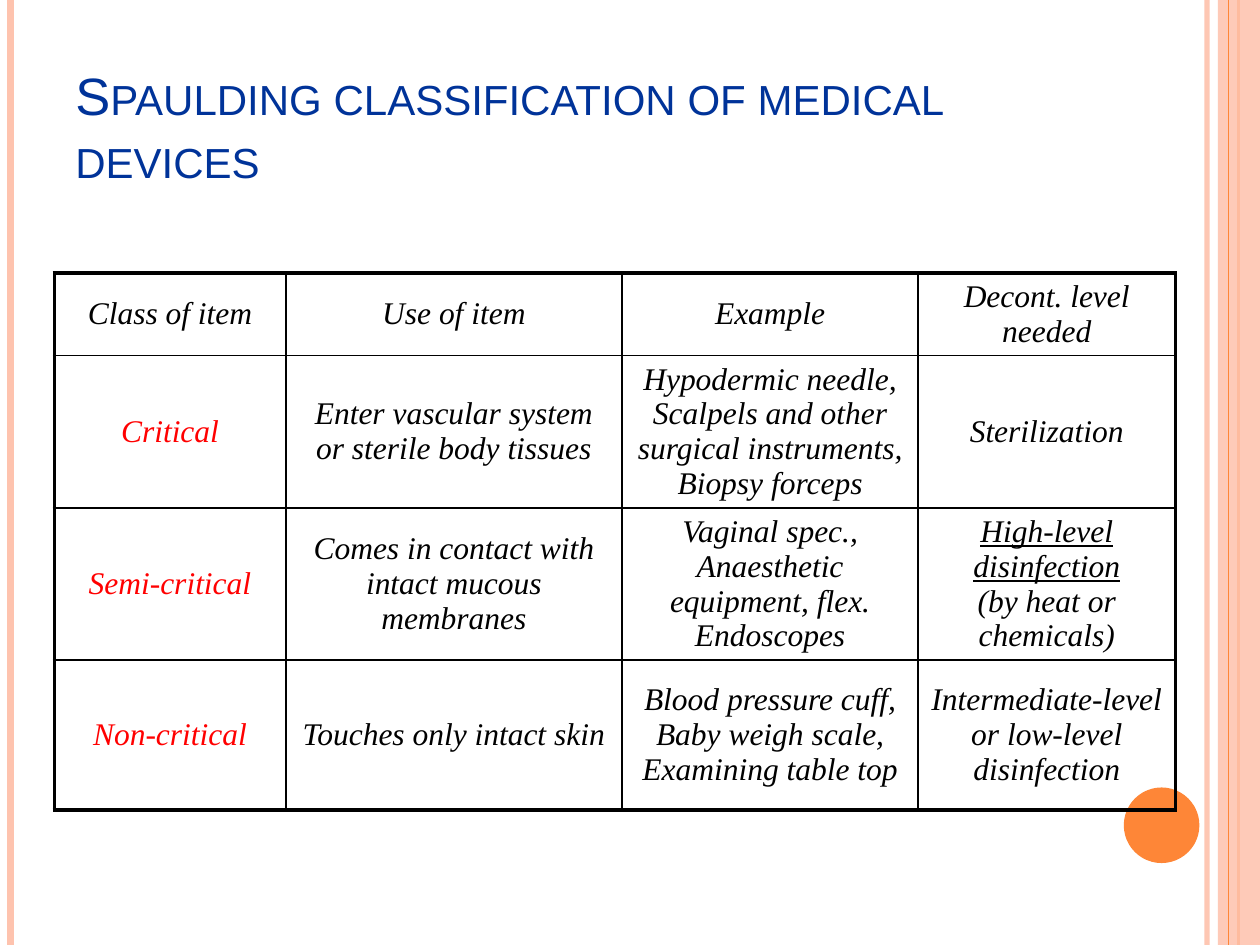
from lxml.etree import SubElement
from pptx import Presentation
from pptx.dml.color import RGBColor
from pptx.enum.shapes import MSO_CONNECTOR, MSO_SHAPE
from pptx.enum.text import MSO_ANCHOR, PP_ALIGN
from pptx.oxml.ns import qn
from pptx.util import Pt

WIDTH, HEIGHT = 720, 540
PEACH, ORANGE, BLACK, RED, WHITE, BLUE = "FEC3AE", "FE8637", "000000", "FF0000", "FFFFFF", "003399"

TITLE = "Spaulding classification of medical devices"
ROWS = [
    ["Class of item", "Use of item", "Example", "Decont. level needed"],
    ["Critical", "Enter vascular system or sterile body tissues",
     "Hypodermic needle, Scalpels and other surgical instruments, Biopsy forceps", "Sterilization"],
    ["Semi-critical", "Comes in contact with intact mucous membranes",
     "Vaginal spec., Anaesthetic equipment, flex. Endoscopes",
     ("High-level disinfection", "(by heat or chemicals)")],
    ["Non-critical", "Touches only intact skin",
     "Blood pressure cuff, Baby weigh scale, Examining table top",
     "Intermediate-level or low-level disinfection"],
]
COLUMN_WIDTHS = [132.3, 192.2, 169.2, 147]
ROW_HEIGHTS = [47.2, 87, 87, 85.7]
TABLE_LEFT, TABLE_TOP = 31, 156
BACK_LINES = [(689.8, PEACH, 3, 93), (6, PEACH, 4.5, 100), (707.8, ORANGE, 1.5, 100)]
BAND = (MSO_SHAPE.RECTANGLE, (696, 0, 24, HEIGHT), PEACH, 87)
FRONT_LINE = (702, ORANGE, 0.75, 100)
DISC = (MSO_SHAPE.OVAL, (642.2, 450, 43.2, 43.2), ORANGE, 100)


def color(value):
    return RGBColor.from_string(value)


def set_values(target, values):
    for name, value in values.items():
        setattr(target, name, value)


def set_alpha(element, percent):
    if percent < 100:
        fill_color = next(element.iter(qn("a:srgbClr")))
        SubElement(fill_color, qn("a:alpha"), val=str(percent * 1000))


def add_stripe(slide, x, line_color, width, alpha):
    connector = slide.shapes.add_connector(MSO_CONNECTOR.STRAIGHT, Pt(x), 0, Pt(x), Pt(HEIGHT))
    connector.line.color.rgb = color(line_color)
    connector.line.width = Pt(width)
    properties = connector._element.spPr
    set_alpha(properties, alpha)
    SubElement(properties, qn("a:effectLst"))


def add_filled_shape(slide, kind, box, fill_color, alpha):
    shape = slide.shapes.add_shape(kind, *map(Pt, box))
    shape.shadow.inherit = False
    shape.fill.solid()
    shape.fill.fore_color.rgb = color(fill_color)
    shape.line.fill.background()
    set_alpha(shape._element.spPr, alpha)


def add_run(paragraph, text, font_color, values):
    run = paragraph.add_run()
    run.text = text
    set_values(run.font, values)
    run.font.color.rgb = color(font_color)
    return run


def add_title(slide):
    box = slide.shapes.add_textbox(*map(Pt, (36, 21.6, 588, 90)))
    set_values(box.text_frame, {"word_wrap": True, "vertical_anchor": MSO_ANCHOR.BOTTOM})
    paragraph = box.text_frame.paragraphs[0]
    paragraph.alignment = PP_ALIGN.LEFT
    run = add_run(paragraph, TITLE, BLUE, {"name": "Arial", "size": Pt(30)})
    run.font._element.set("cap", "small")


def set_borders(cell, widths):
    properties = cell._tc.get_or_add_tcPr()
    for side, width in widths.items():
        line = SubElement(properties, qn(f"a:ln{side}"), w=str(Pt(width)))
        fill = SubElement(line, qn("a:solidFill"))
        SubElement(fill, qn("a:srgbClr"), val=BLACK)


def fill_cell(cell, content, row, column):
    last_row, last_column = len(ROWS) - 1, len(COLUMN_WIDTHS) - 1
    outer = {"L": column == 0, "R": column == last_column, "T": row == 0, "B": row == last_row}
    set_borders(cell, {side: 2.25 if edge else 1 for side, edge in outer.items()})
    if row == 0 or column == 0:
        cell.fill.solid()
        cell.fill.fore_color.rgb = color(WHITE)
    else:
        cell.fill.background()
    set_values(cell, {"vertical_anchor": MSO_ANCHOR.MIDDLE, "margin_top": 0, "margin_bottom": 0})
    paragraph = cell.text_frame.paragraphs[0]
    paragraph.alignment = PP_ALIGN.CENTER
    parts = content if isinstance(content, tuple) else (content,)
    for index, text in enumerate(parts):
        if index:
            paragraph.add_line_break()
        add_run(paragraph, text, RED if row and column == 0 else BLACK,
                {"name": "Times New Roman", "size": Pt(18), "italic": True,
                 "underline": index < len(parts) - 1})


def add_classification_table(slide):
    frame = slide.shapes.add_table(len(ROWS), len(COLUMN_WIDTHS), Pt(TABLE_LEFT), Pt(TABLE_TOP),
                                   Pt(sum(COLUMN_WIDTHS)), Pt(sum(ROW_HEIGHTS)))
    table = frame.table
    set_values(table, {"first_row": False, "horz_banding": False})
    for column, width in zip(table.columns, COLUMN_WIDTHS):
        column.width = Pt(width)
    for row, height in zip(table.rows, ROW_HEIGHTS):
        row.height = Pt(height)
    for row, contents in enumerate(ROWS):
        for column, content in enumerate(contents):
            fill_cell(table.cell(row, column), content, row, column)


def main():
    presentation = Presentation()
    set_values(presentation, {"slide_width": Pt(WIDTH), "slide_height": Pt(HEIGHT)})
    slide = presentation.slides.add_slide(presentation.slide_layouts[6])
    for stripe in BACK_LINES:
        add_stripe(slide, *stripe)
    add_filled_shape(slide, *BAND)
    add_stripe(slide, *FRONT_LINE)
    add_filled_shape(slide, *DISC)
    add_title(slide)
    add_classification_table(slide)
    presentation.save("out.pptx")


if __name__ == "__main__":
    main()
